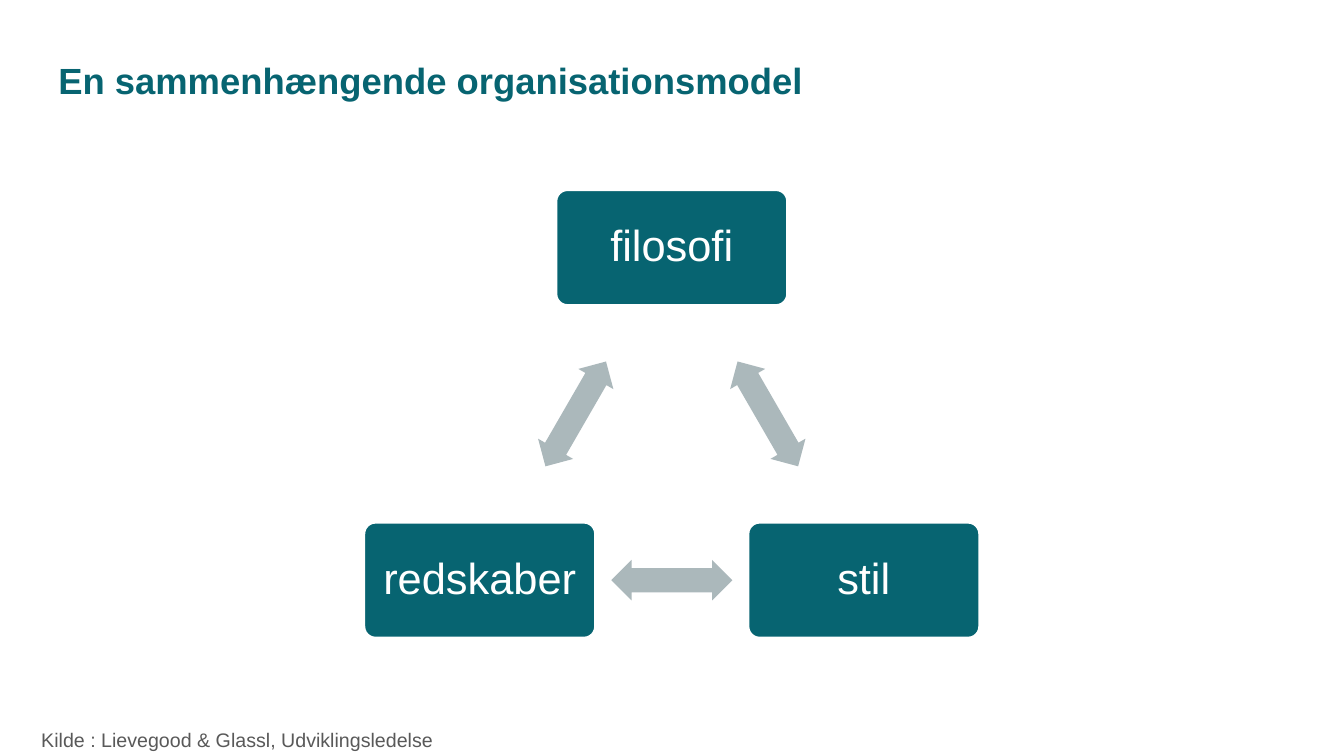
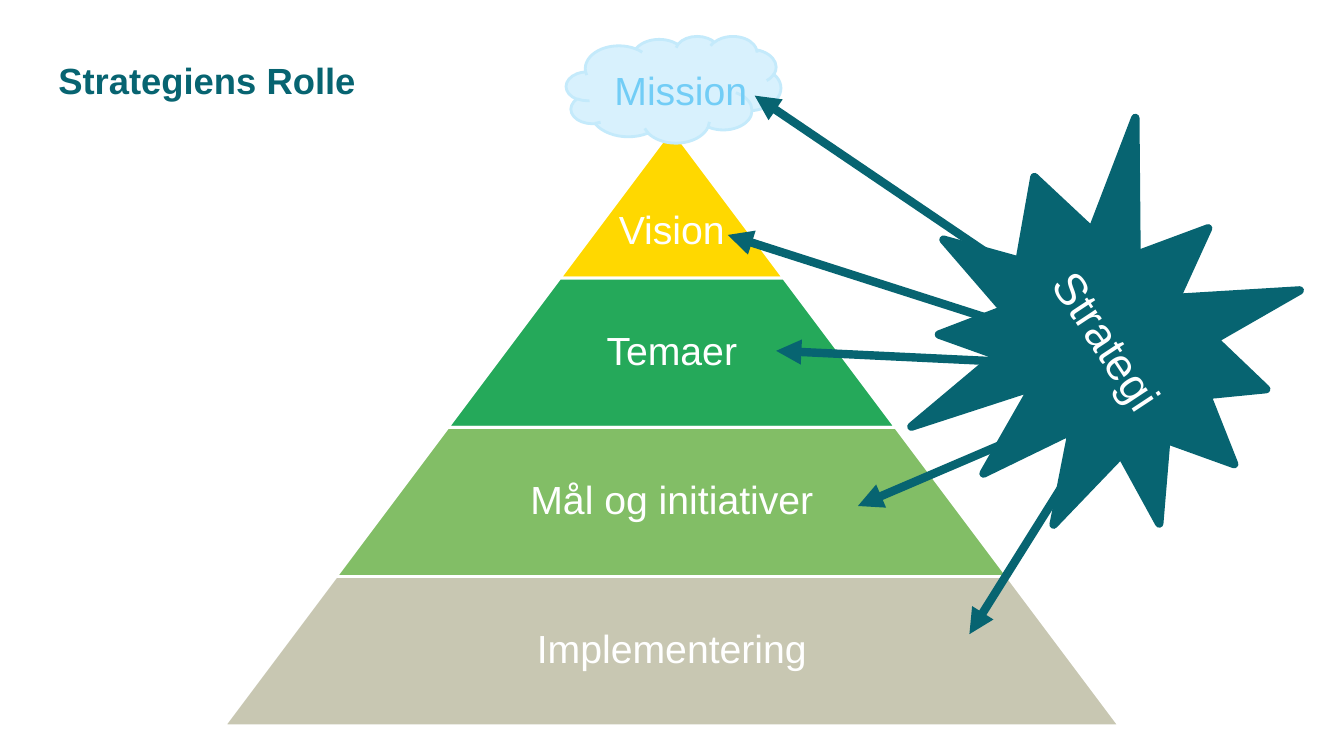
import math

import lxml.etree
import pptx
import pptx.dml.color
import pptx.enum.shapes
import pptx.enum.text
import pptx.oxml.ns
import pptx.util

Cm = pptx.util.Cm
Pt = pptx.util.Pt
RGBColor = pptx.dml.color.RGBColor
Shape = pptx.enum.shapes.MSO_SHAPE
Align = pptx.enum.text.PP_ALIGN

# Colours
TEAL = RGBColor(0x07, 0x64, 0x71)
WHITE = RGBColor(0xFF, 0xFF, 0xFF)
ARROW_GREY = RGBColor(0xAB, 0xB8, 0xBB)
SOURCE_GREY = RGBColor(0x59, 0x59, 0x59)
YELLOW = RGBColor(0xFF, 0xD8, 0x00)
GREEN = RGBColor(0x25, 0xA9, 0x5A)
LIGHT_GREEN = RGBColor(0x82, 0xBE, 0x66)
SAND = RGBColor(0xC8, 0xC7, 0xB2)
CLOUD_FILL = RGBColor(0xD8, 0xF1, 0xFD)
CLOUD_LINE = RGBColor(0xC4, 0xEA, 0xFB)
CLOUD_TEXT = RGBColor(0x72, 0xCD, 0xF6)

# Text formats: size, colour, bold, alignment, line spacing
TITLE = (26, TEAL, True, Align.LEFT, 0.9)
NODE = (31, WHITE, False, Align.CENTER, 0.9)
TIER = (28, WHITE, False, Align.CENTER, 0.9)
MISSION = (28, CLOUD_TEXT, False, Align.CENTER, 1.0)
STRATEGY = (32, WHITE, False, Align.CENTER, 1.0)
SOURCE = (14, SOURCE_GREY, False, Align.LEFT, 1.0)


def paint(shape, fill, line=None, width=2):
    shape.shadow.inherit = False
    shape.fill.solid()
    shape.fill.fore_color.rgb = fill
    if line is None:
        shape.line.fill.background()
    else:
        shape.line.color.rgb = line
        shape.line.width = Pt(width)


def write(shape, text, text_format, margins, wrap=True):
    size, colour, bold, alignment, spacing = text_format
    frame = shape.text_frame
    frame.word_wrap = wrap
    frame.vertical_anchor = pptx.enum.text.MSO_ANCHOR.MIDDLE
    for side, margin in zip(("left", "top", "right", "bottom"), margins):
        setattr(frame, f"margin_{side}", Cm(margin))
    paragraph = frame.paragraphs[0]
    paragraph.text = text
    paragraph.alignment = alignment
    paragraph.line_spacing = spacing
    font_values = {"name": "Arial", "size": Pt(size), "bold": bold}
    for name, value in font_values.items():
        setattr(paragraph.font, name, value)
    paragraph.font.color.rgb = colour


presentation = pptx.Presentation()
presentation.slide_width = Cm(33.87)
presentation.slide_height = Cm(19.05)
CENTRE_X = 16.93

# Slides with their titles
slides = []
for title in ("En sammenhængende organisationsmodel", "Strategiens Rolle"):
    slide = presentation.slides.add_slide(presentation.slide_layouts[6])
    box = slide.shapes.add_textbox(Cm(1.47), Cm(1.09), Cm(26.06), Cm(1.98))
    write(box, title, TITLE, (0, 0, 0, 0))
    slides.append(slide)
model_slide, strategy_slide = slides

# Organisation model: three nodes in a triangle
NODE_WIDTH, NODE_HEIGHT = 5.84, 2.92
ARROW_WIDTH, ARROW_HEIGHT = 3.05, 1.02
nodes = [
    ("filosofi", CENTRE_X, 6.24),
    ("stil", CENTRE_X + 4.84, 14.62),
    ("redskaber", CENTRE_X - 4.84, 14.62),
]
for index, (label, x, y) in enumerate(nodes):
    node = model_slide.shapes.add_shape(
        Shape.ROUNDED_RECTANGLE, Cm(x - NODE_WIDTH / 2), Cm(y - NODE_HEIGHT / 2),
        Cm(NODE_WIDTH), Cm(NODE_HEIGHT))
    node.adjustments[0] = 0.1
    paint(node, TEAL, WHITE)
    write(node, label, NODE, (0.4, 0.4, 0.4, 0.4))

    # Double arrow halfway to the next node
    next_x, next_y = nodes[(index + 1) % len(nodes)][1:]
    arrow = model_slide.shapes.add_shape(
        Shape.LEFT_RIGHT_ARROW,
        Cm((x + next_x - ARROW_WIDTH) / 2), Cm((y + next_y - ARROW_HEIGHT) / 2),
        Cm(ARROW_WIDTH), Cm(ARROW_HEIGHT))
    arrow.adjustments[0] = 0.6
    arrow.adjustments[1] = 0.5
    arrow.rotation = math.degrees(math.atan2(next_y - y, next_x - x)) % 360
    paint(arrow, ARROW_GREY)

# Source line
source = model_slide.shapes.add_textbox(Cm(0.79), Cm(18.2), Cm(10.44), Cm(0.86))
write(source, "Kilde : Lievegood & Glassl, Udviklingsledelse", SOURCE,
      (0.25, 0.13, 0.25, 0.13), wrap=False)

# Strategy pyramid: each tier widens by the same step
APEX_Y, TIER_HEIGHT, HALF_STEP = 3.25, 3.76, 2.82
tiers = [
    ("Vision", YELLOW, 1.5),
    ("Temaer", GREEN, 0.1),
    ("Mål og initiativer", LIGHT_GREEN, 0.1),
    ("Implementering", SAND, 0.1),
]
for index, (label, colour, top_margin) in enumerate(tiers):
    top = APEX_Y + index * TIER_HEIGHT
    bottom = top + TIER_HEIGHT
    half_top = index * HALF_STEP
    half_bottom = half_top + HALF_STEP
    builder = strategy_slide.shapes.build_freeform(
        Cm(CENTRE_X - half_bottom), Cm(bottom))
    builder.add_line_segments([
        (Cm(CENTRE_X - half_top), Cm(top)),
        (Cm(CENTRE_X + half_top), Cm(top)),
        (Cm(CENTRE_X + half_bottom), Cm(bottom)),
    ], close=True)
    tier = builder.convert_to_shape()
    paint(tier, colour, WHITE)
    write(tier, label, TIER, (0.1, top_margin, 0.1, 0.1))

# Mission cloud above the apex
cloud = strategy_slide.shapes.add_shape(
    Shape.CLOUD, Cm(14.27), Cm(0.91), Cm(5.41), Cm(2.69))
paint(cloud, CLOUD_FILL, CLOUD_LINE)
write(cloud, "Mission", MISSION, (0.75, 0.15, 0, 0), wrap=False)

# Strategy star
star = strategy_slide.shapes.add_shape(
    Shape.EXPLOSION1, Cm(23.19), Cm(3.76), Cm(9.02), Cm(10.06))
star.rotation = 56.6
paint(star, TEAL, TEAL, 6)
write(star, "Strategi", STRATEGY, (0.25, 0.13, 0.25, 0.13))

# Arrows from the star to the cloud and every tier
arrow_ends = [
    (25.4, 6.73, 19.02, 2.41),
    (25.4, 8.18, 18.34, 5.92),
    (25.4, 9.12, 19.56, 8.84),
    (26.67, 10.59, 21.62, 12.75),
    (27.3, 11.4, 24.43, 15.98),
]
for ends in arrow_ends:
    connector = strategy_slide.shapes.add_connector(
        pptx.enum.shapes.MSO_CONNECTOR.STRAIGHT, *[Cm(value) for value in ends])
    connector.line.color.rgb = TEAL
    connector.line.width = Pt(6)
    line = connector.line._get_or_add_ln()
    lxml.etree.SubElement(line, pptx.oxml.ns.qn("a:tailEnd"), type="triangle")
    lxml.etree.SubElement(connector._element.spPr, pptx.oxml.ns.qn("a:effectLst"))

presentation.save("out.pptx")
